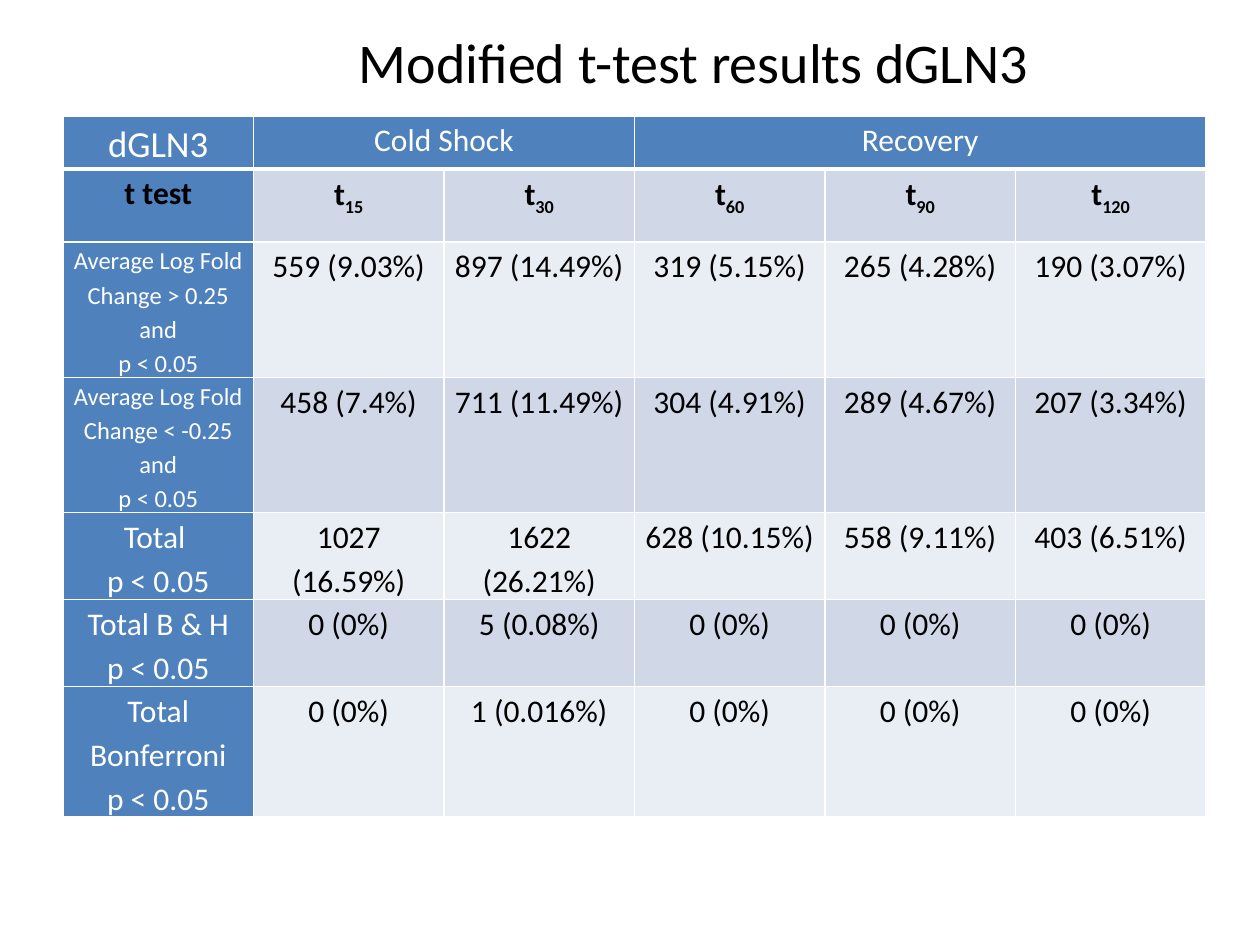
from dataclasses import dataclass

from lxml import etree
from pptx import Presentation
from pptx.dml.color import RGBColor
from pptx.enum.text import MSO_ANCHOR, MSO_AUTO_SIZE, PP_ALIGN
from pptx.oxml.ns import qn
from pptx.util import Cm, Pt

CENTER = PP_ALIGN.CENTER
LEFT = PP_ALIGN.LEFT
TOP = MSO_ANCHOR.TOP
FIT_SHAPE = MSO_AUTO_SIZE.SHAPE_TO_FIT_TEXT
TITLE_ONLY = 5

FONT = "Calibri"
COLORS = {
    "header": "4F81BD",
    "dark_band": "D0D8E8",
    "light_band": "E9EDF4",
    "white": "FFFFFF",
    "black": "000000",
}
TIMES = (15, 30, 60, 90, 120)
THRESHOLD = "p < 0.05"
HEADER_HEIGHT = Cm(1.07)
ROW_HEIGHT = Cm(1.47)


@dataclass(frozen=True)
class TextStyle:
    size: int = 18
    color: str = "black"
    bold: bool = False


@dataclass(frozen=True)
class ResultRow:
    label: str
    counts: tuple[str, ...]
    label_size: int = 18


RESULTS = (
    ResultRow(
        "Average Log Fold Change > 0.25 and",
        ("559 (9.03%)", "897 (14.49%)", "319 (5.15%)", "265 (4.28%)", "190 (3.07%)"),
        14,
    ),
    ResultRow(
        "Average Log Fold Change < -0.25 and",
        ("458 (7.4%)", "711 (11.49%)", "304 (4.91%)", "289 (4.67%)", "207 (3.34%)"),
        14,
    ),
    ResultRow(
        "Total ",
        ("1027 (16.59%)", "1622 (26.21%)", "628 (10.15%)", "558 (9.11%)", "403 (6.51%)"),
    ),
    ResultRow("Total B & H", ("0 (0%)", "5 (0.08%)", "0 (0%)", "0 (0%)", "0 (0%)")),
    ResultRow("Total Bonferroni", ("0 (0%)", "1 (0.016%)", "0 (0%)", "0 (0%)", "0 (0%)")),
)


def rgb(name: str) -> RGBColor:
    return RGBColor.from_string(COLORS[name])


def set_borders(cell, bottom_width: int) -> None:
    properties = cell._tc.get_or_add_tcPr()
    widths = {"a:lnL": 1, "a:lnR": 1, "a:lnT": 1, "a:lnB": bottom_width}
    for position, (tag, width) in enumerate(widths.items()):
        line = etree.Element(qn(tag), w=str(Pt(width)))
        fill = etree.SubElement(line, qn("a:solidFill"))
        etree.SubElement(fill, qn("a:srgbClr"), val=COLORS["white"])
        properties.insert(position, line)


def format_cell(cell, fill: str, bottom_width: int = 1) -> None:
    cell.fill.solid()
    cell.fill.fore_color.rgb = rgb(fill)
    cell.margin_left = cell.margin_right = Cm(0.18)
    cell.margin_top = cell.margin_bottom = 0
    set_borders(cell, bottom_width)


def write_cell(cell, text: str, style: TextStyle, subscript: str = "") -> None:
    cell.text = text
    for paragraph in cell.text_frame.paragraphs:
        paragraph.alignment = CENTER
        paragraph.line_spacing = 1.15
        if subscript:
            run = paragraph.add_run()
            run.text = subscript
            run.font._element.set("baseline", "-25000")
        for font in (paragraph.font, *(run.font for run in paragraph.runs)):
            font.name = FONT
            font.size = Pt(style.size)
            font.bold = style.bold
            font.color.rgb = rgb(style.color)


def add_title(slide) -> None:
    title = slide.shapes.title
    title.left, title.top = Cm(6.98), Cm(0.43)
    title.width, title.height = Cm(14.2), Cm(1.62)
    frame = title.text_frame
    frame.text = "Modified t-test results dGLN3"
    frame.word_wrap = False
    frame.auto_size = FIT_SHAPE
    frame.vertical_anchor = TOP
    heading = frame.paragraphs[0]
    heading.alignment = LEFT
    heading.font.name = FONT
    heading.font.size = Pt(32)
    heading.font.color.rgb = rgb("black")


def add_results_table(slide) -> None:
    table_frame = slide.shapes.add_table(
        len(RESULTS) + 2, len(TIMES) + 1, Cm(1.27), Cm(2.34), Cm(23.04), Cm(14.12)
    )
    table = table_frame.table
    table.first_row = table.horz_banding = False

    for row_index, row in enumerate(table.rows):
        row.height = ROW_HEIGHT if row_index else HEADER_HEIGHT
        band = "dark_band" if row_index % 2 else "light_band"
        for column_index, cell in enumerate(row.cells):
            is_header = row_index == 0 or column_index == 0
            format_cell(cell, "header" if is_header else band, 1 if row_index else 3)
    table_frame.height = Cm(14.12)

    table.cell(0, 1).merge(table.cell(0, 2))
    table.cell(0, 3).merge(table.cell(0, 5))
    write_cell(table.cell(0, 0), "dGLN3", TextStyle(21, "white"))
    write_cell(table.cell(0, 1), "Cold Shock", TextStyle(color="white"))
    write_cell(table.cell(0, 3), "Recovery", TextStyle(color="white"))

    bold = TextStyle(bold=True)
    write_cell(table.cell(1, 0), "t test", bold)
    for column_index, minutes in enumerate(TIMES, 1):
        write_cell(table.cell(1, column_index), "t", bold, str(minutes))

    for row_index, result in enumerate(RESULTS, 2):
        label_style = TextStyle(result.label_size, "white")
        write_cell(table.cell(row_index, 0), f"{result.label}\n{THRESHOLD}", label_style)
        for column_index, count in enumerate(result.counts, 1):
            write_cell(table.cell(row_index, column_index), count, TextStyle())


def main() -> None:
    presentation = Presentation()
    presentation.slide_width, presentation.slide_height = Cm(25.4), Cm(19.05)
    slide = presentation.slides.add_slide(presentation.slide_layouts[TITLE_ONLY])
    add_results_table(slide)
    add_title(slide)
    presentation.save("out.pptx")


if __name__ == "__main__":
    main()
